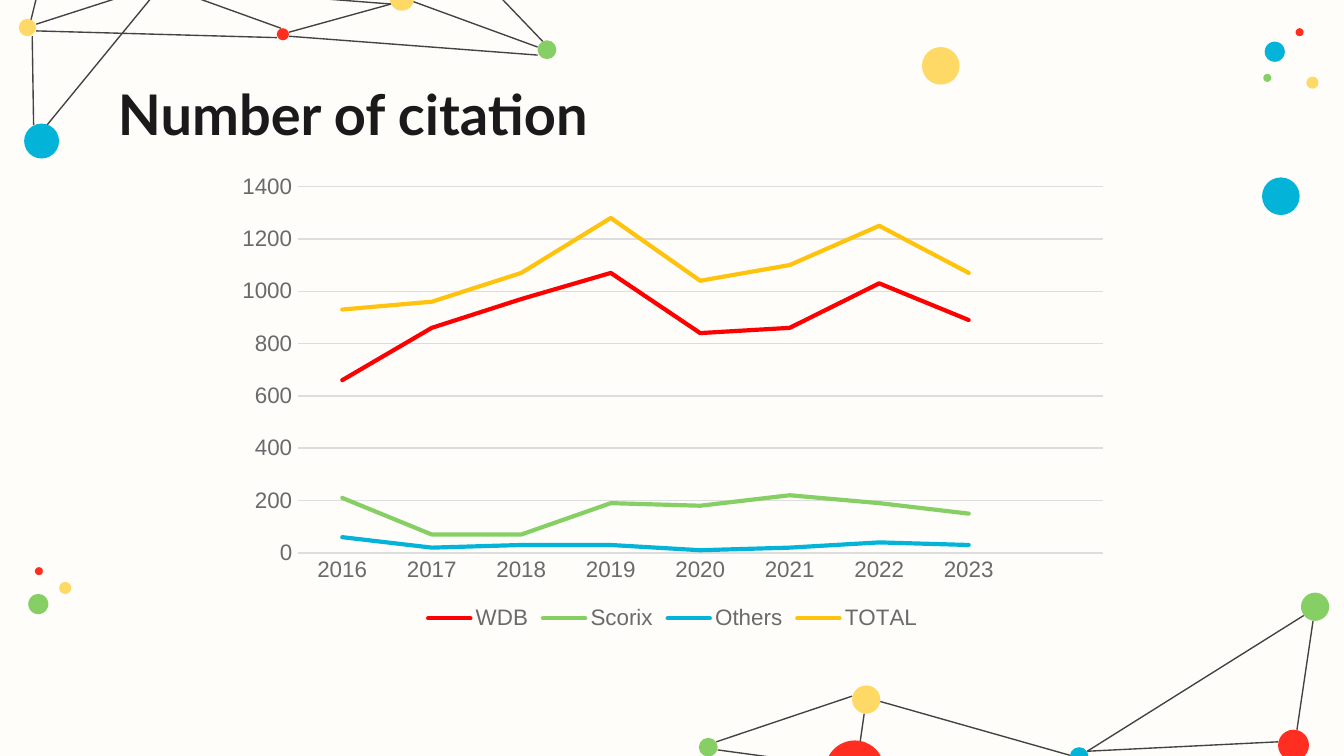
from pptx import Presentation
from pptx.chart.data import CategoryChartData
from pptx.dml.color import RGBColor
from pptx.enum.chart import XL_CHART_TYPE, XL_LEGEND_POSITION, XL_MARKER_STYLE, XL_TICK_MARK
from pptx.enum.shapes import MSO_CONNECTOR, MSO_SHAPE
from pptx.oxml.ns import qn
from pptx.util import Inches, Pt
from lxml.etree import SubElement

PAPER = RGBColor(0xFE, 0xFD, 0xFA)
INK = RGBColor(0x1A, 0x1A, 0x1A)
THREAD = RGBColor(0x43, 0x43, 0x43)
LABEL = RGBColor(0x6A, 0x6A, 0x6A)
GRID = RGBColor(0xDD, 0xDD, 0xDD)
YELLOW = RGBColor(0xFF, 0xD9, 0x66)
GREEN = RGBColor(0x86, 0xCF, 0x64)
RED = RGBColor(0xFF, 0x2E, 0x20)
BLUE = RGBColor(0x04, 0xB4, 0xD8)
PURE_RED = RGBColor(0xFF, 0x00, 0x00)
GOLD = RGBColor(0xFF, 0xC3, 0x0D)

THREADS = [
    (0.27, 0.18, 1.14, -0.1), (2.09, 0.21, 1.23, -0.1), (0.87, -2.44, 0.23, 0.15),
    (0.27, 0.23, 2.06, 0.28), (2.15, 0.24, 2.91, 0.03), (1.23, -0.1, 2.91, 0.03),
    (4, 0.35, 3.07, 0.01), (2.15, 0.27, 4, 0.41), (4.04, 0.31, 3.12, -0.65),
    (1.17, -0.07, 0.35, 0.93), (0.24, 0.27, 0.25, 0.93),
    (9.77, 4.62, 9.65, 5.43), (9.7, 4.58, 8.09, 5.59), (9.51, 5.52, 8.09, 5.59),
    (5.34, 5.58, 6.15, 5.69), (5.33, 5.52, 6.34, 5.18), (6.55, 5.22, 7.96, 5.62),
    (6.43, 5.31, 6.4, 5.52),
]
DOTS = {
    YELLOW: [(0.44, 4.33, 0.09), (9.72, 0.57, 0.09), (2.9, -0.1, 0.18), (0.14, 0.14, 0.13),
             (6.34, 5.1, 0.21), (6.86, 0.35, 0.28)],
    GREEN: [(0.21, 4.42, 0.15), (9.4, 0.55, 0.06), (4, 0.3, 0.14), (9.68, 4.41, 0.21),
            (5.2, 5.49, 0.14)],
    RED: [(0.26, 4.22, 0.06), (9.64, 0.21, 0.06), (2.06, 0.21, 0.09), (6.14, 5.51, 0.44),
          (9.51, 5.43, 0.23)],
    BLUE: [(9.41, 0.31, 0.15), (0.18, 0.92, 0.26), (7.96, 5.56, 0.14), (9.39, 1.32, 0.28)],
}
YEARS = [str(year) for year in range(2016, 2024)] + [""]
CITATIONS = [
    ("WDB", PURE_RED, [660, 860, 970, 1070, 840, 860, 1030, 890, None]),
    ("Scorix", GREEN, [210, 70, 70, 190, 180, 220, 190, 150]),
    ("Others", BLUE, [60, 20, 30, 30, 10, 20, 40, 30, None]),
    ("TOTAL", GOLD, [930, 960, 1070, 1280, 1040, 1100, 1250, 1070, None]),
]


class Canvas:
    """Draws styled elements on the current slide."""

    heading_font = "Lato"
    chart_font = "Arial"

    def __init__(self, slide):
        self.slide = slide
        slide.background.fill.solid()
        slide.background.fill.fore_color.rgb = PAPER

    def dot(self, left, top, size, color):
        circle = self.slide.shapes.add_shape(
            MSO_SHAPE.OVAL, Inches(left), Inches(top), Inches(size), Inches(size))
        circle.shadow.inherit = False
        circle.fill.solid()
        circle.fill.fore_color.rgb = color
        circle.line.fill.background()

    def thread(self, *ends):
        thread = self.slide.shapes.add_connector(
            MSO_CONNECTOR.STRAIGHT, *[Inches(end) for end in ends])
        thread.line.color.rgb = THREAD
        thread.line.width = Pt(0.75)
        SubElement(thread._element.spPr, qn("a:effectLst"))

    def title(self, wording, left, top, width, height):
        frame = self.slide.shapes.add_textbox(
            Inches(left), Inches(top), Inches(width), Inches(height)).text_frame
        frame.word_wrap = True
        frame.margin_left = frame.margin_right = Inches(0.1)
        frame.margin_top = frame.margin_bottom = Inches(0.1)
        run = frame.paragraphs[0].add_run()
        run.text = wording
        run.font.bold = True
        self.style(run.font, self.heading_font, 30, INK)

    def style(self, font, name, size, color):
        font.name = name
        font.size = Pt(size)
        font.color.rgb = color

    def line_chart(self, categories, rows, left, top, width, height):
        data = CategoryChartData()
        data.categories = categories
        for name, _, values in rows:
            data.add_series(name, values)
        chart = self.slide.shapes.add_chart(
            XL_CHART_TYPE.LINE, Inches(left), Inches(top),
            Inches(width), Inches(height), data).chart
        chart.has_title = False
        self.style(chart.font, self.chart_font, 10, INK)
        chart.has_legend = True
        chart.legend.position = XL_LEGEND_POSITION.BOTTOM
        chart.legend.include_in_layout = False
        self.style(chart.legend.font, self.chart_font, 12, LABEL)
        for axis in (chart.category_axis, chart.value_axis):
            axis.major_tick_mark = axis.minor_tick_mark = XL_TICK_MARK.NONE
            self.style(axis.tick_labels.font, self.chart_font, 12, LABEL)
        chart.value_axis.minimum_scale = 0
        chart.value_axis.maximum_scale = 1400
        chart.value_axis.major_unit = 200
        chart.value_axis.format.line.fill.background()
        for line in (chart.category_axis.format.line,
                     chart.value_axis.major_gridlines.format.line):
            line.color.rgb = GRID
            line.width = Pt(0.75)
        chart.plots[0].vary_by_categories = False
        for series, (_, color, _) in zip(chart.plots[0].series, rows):
            series.smooth = False
            series.marker.style = XL_MARKER_STYLE.NONE
            series.format.line.color.rgb = color
            series.format.line.width = Pt(2.25)
            series._element.find(qn("c:spPr")).find(qn("a:ln")).set("cap", "rnd")


def main():
    deck = Presentation()
    deck.slide_width = Inches(10)
    deck.slide_height = deck.slide_width * 9 // 16
    canvas = Canvas(deck.slides.add_slide(deck.slide_layouts[6]))
    for ends in THREADS:
        canvas.thread(*ends)
    for color, places in DOTS.items():
        for left, top, size in places:
            canvas.dot(left, top, size, color)
    canvas.title("Number of citation", 0.78, 0.49, 8.44, 0.63)
    canvas.line_chart(YEARS, CITATIONS, 1.67, 1.23, 6.67, 3.5)
    deck.save("out.pptx")


if __name__ == "__main__":
    main()
